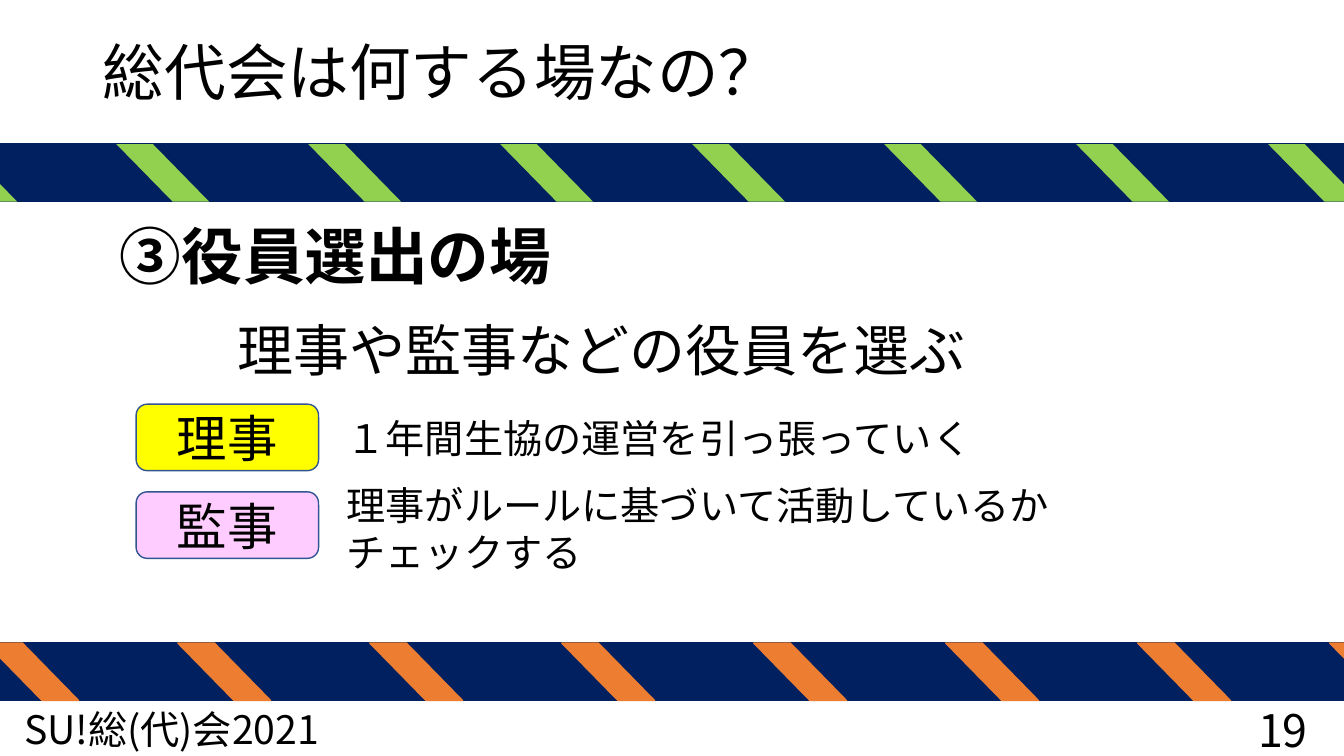
from dataclasses import dataclass

from lxml.etree import SubElement
from pptx import Presentation
from pptx.dml.color import RGBColor
from pptx.enum.shapes import MSO_SHAPE
from pptx.enum.text import MSO_ANCHOR, MSO_AUTO_SIZE, PP_ALIGN
from pptx.oxml.ns import qn
from pptx.util import Inches, Pt


@dataclass(frozen=True)
class Theme:
    font: str = "Noto Sans CJK JP"
    text: str = "000000"
    navy: str = "002060"
    green: str = "92D050"
    orange: str = "ED7D31"
    yellow: str = "FFFF00"
    pink: str = "FFCCFF"
    label_line: str = "325491"
    title_size: int = 44
    lead_size: int = 40
    label_size: int = 36
    number_size: int = 32
    body_size: int = 28


THEME = Theme()
PAGE_WIDTH = 13.33
BAND_HEIGHT = 0.57
STRIPE_WIDTH = 0.92
STRIPE_STEP = 1.904
STRIPE_COUNT = 8


def write(shape, lines, size, bold=False, align=PP_ALIGN.LEFT,
          anchor=MSO_ANCHOR.TOP, line_spacing=1.0):
    frame = shape.text_frame
    frame.word_wrap = True
    frame.auto_size = MSO_AUTO_SIZE.NONE
    frame.vertical_anchor = anchor
    for index, line in enumerate(lines):
        para = frame.add_paragraph() if index else frame.paragraphs[0]
        para.alignment = align
        para.line_spacing = line_spacing
        span = para.add_run()
        span.text = line
        span.font.size = Pt(size)
        span.font.bold = bold
        span.font.name = THEME.font
        span.font.color.rgb = RGBColor.from_string(THEME.text)
        east_asian = SubElement(span.font._element, qn("a:ea"))
        east_asian.set("typeface", THEME.font)


def add_text(page, place, lines, size, **style):
    box = page.shapes.add_textbox(*map(Inches, place))
    write(box, lines, size, **style)
    return box


def add_filled(page, kind, place, fill, line=None):
    shape = page.shapes.add_shape(kind, *map(Inches, place))
    shape.shadow.inherit = False
    shape.fill.solid()
    shape.fill.fore_color.rgb = RGBColor.from_string(fill)
    if line:
        shape.line.color.rgb = RGBColor.from_string(line)
        shape.line.width = Pt(1)
    else:
        shape.line.fill.background()
    return shape


def add_band(page, top):
    add_filled(page, MSO_SHAPE.RECTANGLE, (0, top, PAGE_WIDTH, BAND_HEIGHT),
               THEME.navy, THEME.navy)


def add_stripes(page, first_left, top, fill, line=None):
    """Repeat left-leaning stripes at an equal step along a band."""
    for index in range(STRIPE_COUNT):
        left = first_left + index * STRIPE_STEP
        stripe = add_filled(page, MSO_SHAPE.PARALLELOGRAM,
                            (left, top, STRIPE_WIDTH, BAND_HEIGHT), fill, line)
        stripe.adjustments[0] = 0.978
        stripe._element.spPr.find(qn("a:xfrm")).set("flipH", "1")


def add_label(page, top, text, fill):
    label = add_filled(page, MSO_SHAPE.ROUNDED_RECTANGLE,
                       (1.35, top, 1.81, 0.66), fill, THEME.label_line)
    write(label, [text], THEME.label_size, align=PP_ALIGN.CENTER,
          anchor=MSO_ANCHOR.MIDDLE)


def add_title(page, text):
    title = page.shapes.title
    title.left, title.top, title.width, title.height = map(
        Inches, (0.92, 0.15, 11.5, 1.2))
    write(title, [text], THEME.title_size, anchor=MSO_ANCHOR.MIDDLE,
          line_spacing=0.9)


def main():
    deck = Presentation()
    deck.slide_width, deck.slide_height = Inches(PAGE_WIDTH), Inches(7.5)
    page = deck.slides.add_slide(deck.slide_layouts[5])

    top_band, bottom_band = 1.43, 6.38
    add_band(page, top_band)
    add_band(page, bottom_band)
    add_text(page, (12.38, 6.92, 1.03, 0.64), ["19"], THEME.number_size)
    add_text(page, (0.14, 6.95, 4.79, 0.57), ["SU!総(代)会2021"],
             THEME.body_size)
    add_stripes(page, -0.75, top_band, THEME.green)
    add_stripes(page, -0.14, bottom_band, THEME.orange, THEME.orange)

    add_title(page, "総代会は何する場なの？")
    heading = add_text(page, (1.09, 2.25, 12, 0.8), ["③役員選出の場"],
                       THEME.title_size, bold=True, line_spacing=0.9)
    heading.text_frame.margin_top = 0
    add_text(page, (2.26, 3.08, 9.38, 0.77), ["理事や監事などの役員を選ぶ"],
             THEME.lead_size)

    add_label(page, 4.01, "理事", THEME.yellow)
    add_text(page, (3.34, 4.06, 8.39, 0.57),
             ["１年間生協の運営を引っ張っていく"], THEME.body_size)
    add_label(page, 4.88, "監事", THEME.pink)
    add_text(page, (3.34, 4.73, 9.08, 1.04),
             ["理事がルールに基づいて活動しているか", "チェックする"],
             THEME.body_size)

    deck.save("out.pptx")


if __name__ == "__main__":
    main()
